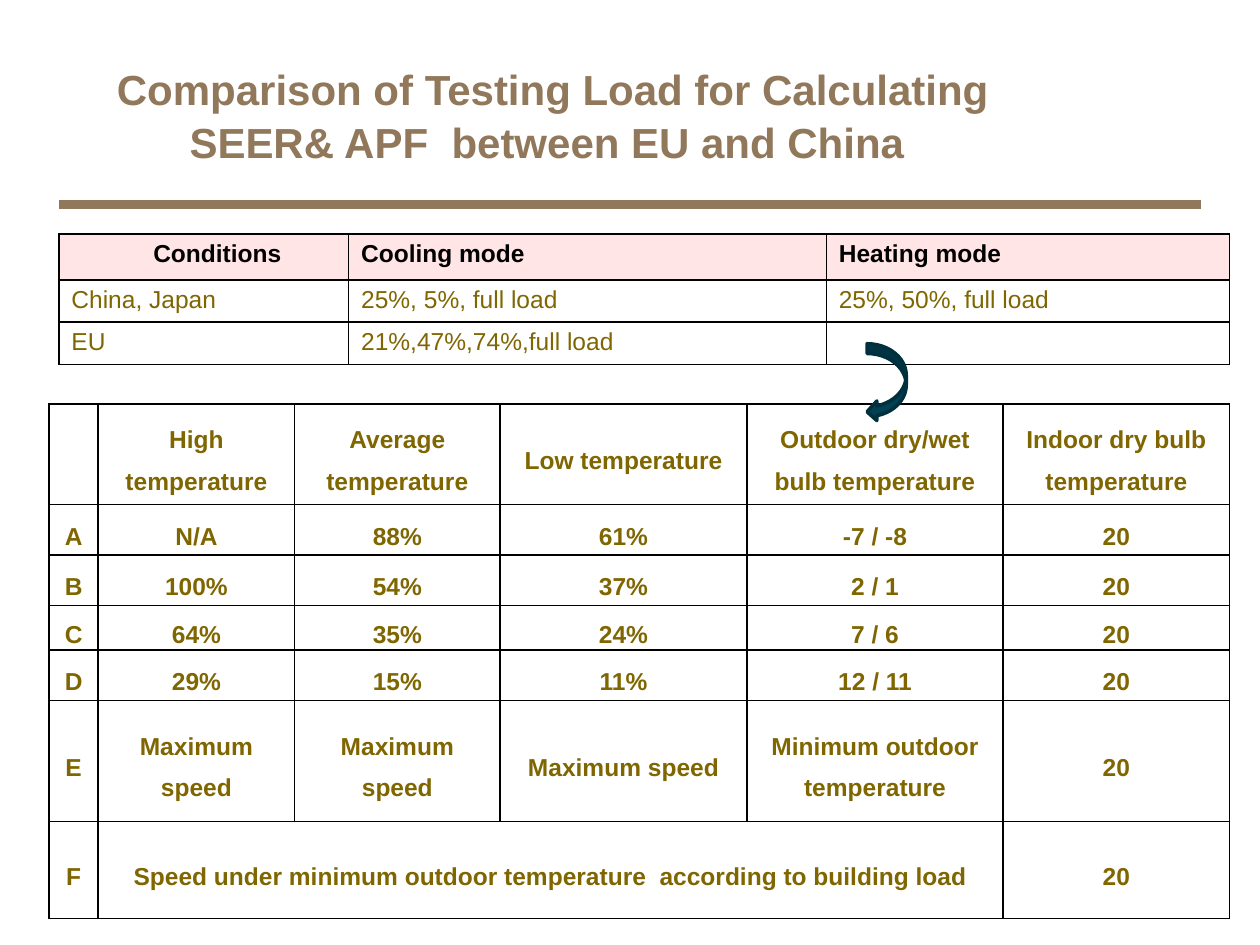
from dataclasses import dataclass

from lxml.etree import SubElement
from pptx import Presentation
from pptx.dml.color import RGBColor
from pptx.enum.shapes import MSO_CONNECTOR as Connector, MSO_SHAPE as Shape
from pptx.enum.text import MSO_ANCHOR as Anchor, PP_ALIGN as Align
from pptx.oxml.ns import qn
from pptx.slide import Slide
from pptx.table import Table, _Cell as Cell
from pptx.util import Cm, Pt

COLORS = {
    "title": "91785B",
    "black": "000000",
    "olive": "7F6600",
    "header": "FFE5E5",
    "arrow": "004153",
    "arrow_edge": "00303D",
}
FONT = "Arial"


@dataclass(frozen=True)
class Grid:
    left: float
    top: float
    columns: list[float]
    rows: list[float]
    texts: list[list[str]]
    margin_x: float
    margin_y: float
    anchor: Anchor
    align: Align
    line_spacing: float
    bold: bool
    header_fill: bool


MODES = Grid(
    1.19, 4.72, [5.84, 9.63, 8.13], [0.92, 0.81, 0.81],
    [
        ["Conditions", "Cooling mode", "Heating mode"],
        ["China, Japan", "25%, 5%, full load", "25%, 50%, full load"],
        ["EU", "21%,47%,74%,full load", ""],
    ],
    0.25, 0.13, Anchor.TOP, Align.LEFT, 1.0, False, True,
)

LOADS = Grid(
    0.99, 8.14, [0.99, 3.96, 4.14, 4.98, 5.16, 4.57],
    [2.03, 1.02, 1.02, 0.84, 1.02, 2.44, 1.96],
    [
        ["", "High temperature", "Average temperature", "Low temperature",
         "Outdoor dry/wet bulb temperature", "Indoor dry bulb temperature"],
        ["A", "N/A", "88%", "61%", "-7 / -8", "20"],
        ["B", "100%", "54%", "37%", "2 / 1", "20"],
        ["C", "64%", "35%", "24%", "7 / 6", "20"],
        ["D", "29%", "15%", "11%", "12 / 11", "20"],
        ["E", "Maximum speed", "Maximum speed", "Maximum speed",
         "Minimum outdoor temperature", "20"],
        ["F", "Speed under minimum outdoor temperature  according to building load",
         "", "", "", "20"],
    ],
    0.18, 0, Anchor.MIDDLE, Align.CENTER, 1.5, True, False,
)


def color(name: str) -> RGBColor:
    return RGBColor.from_string(COLORS[name])


def add_borders(cell: Cell) -> None:
    properties = cell._tc.get_or_add_tcPr()
    for side in ("L", "R", "T", "B"):
        line = SubElement(properties, qn(f"a:ln{side}"), w=str(Pt(1)))
        fill = SubElement(line, qn("a:solidFill"))
        SubElement(fill, qn("a:srgbClr"), val=COLORS["black"])


def format_cell(cell: Cell, text: str, grid: Grid, header: bool) -> None:
    add_borders(cell)
    if header:
        cell.fill.solid()
        cell.fill.fore_color.rgb = color("header")
    else:
        cell.fill.background()
    cell.margin_left = cell.margin_right = Cm(grid.margin_x)
    cell.margin_top = cell.margin_bottom = Cm(grid.margin_y)
    cell.vertical_anchor = grid.anchor
    cell.text = text
    para = cell.text_frame.paragraphs[0]
    para.alignment = grid.align
    para.line_spacing = grid.line_spacing
    para.font.name = FONT
    para.font.size = Pt(14)
    para.font.bold = grid.bold or header
    para.font.color.rgb = color("black" if header else "olive")
    if not text:
        SubElement(para._p, qn("a:endParaRPr"), sz="1400")


def add_grid(page: Slide, grid: Grid) -> Table:
    table = page.shapes.add_table(
        len(grid.rows), len(grid.columns), Cm(grid.left), Cm(grid.top),
        Cm(sum(grid.columns)), Cm(sum(grid.rows)),
    ).table
    table.first_row = table.horz_banding = False
    for column, width in zip(table.columns, grid.columns):
        column.width = Cm(width)
    for row, height, texts in zip(table.rows, grid.rows, grid.texts):
        row.height = Cm(height)
        header = grid.header_fill and texts is grid.texts[0]
        for cell, text in zip(row.cells, texts):
            format_cell(cell, text, grid, header)
    return table


def add_title(page: Slide) -> None:
    box = page.shapes.add_textbox(Cm(1.19), Cm(1.12), Cm(19.91), Cm(2.36))
    frame = box.text_frame
    frame.word_wrap = True
    frame.vertical_anchor = Anchor.MIDDLE
    frame.margin_left = frame.margin_right = 0
    frame.margin_top = frame.margin_bottom = 0
    para = frame.paragraphs[0]
    para.text = ("Comparison of Testing Load for Calculating "
                 "SEER& APF  between EU and China ")
    para.alignment = Align.CENTER
    para.line_spacing = 1.05
    para.font.name = FONT
    para.font.size = Pt(24)
    para.font.bold = True
    para.font.color.rgb = color("title")


def add_rule(page: Slide) -> None:
    rule = page.shapes.add_connector(
        Connector.STRAIGHT, Cm(1.19), Cm(4.12), Cm(24.21), Cm(4.12))
    rule.line.color.rgb = color("title")
    rule.line.width = Pt(5)
    SubElement(rule._element.spPr, qn("a:effectLst"))


def add_arrow(page: Slide) -> None:
    arrow = page.shapes.add_shape(
        Shape.CURVED_LEFT_ARROW, Cm(17.48), Cm(6.93), Cm(0.79), Cm(1.57))
    arrow.shadow.inherit = False
    arrow.fill.solid()
    arrow.fill.fore_color.rgb = color("arrow")
    arrow.line.color.rgb = color("arrow_edge")
    arrow.line.width = Pt(2)


def main() -> None:
    deck = Presentation()
    deck.slide_width, deck.slide_height = Cm(25.4), Cm(19.05)
    page = deck.slides.add_slide(deck.slide_layouts[6])
    add_rule(page)
    add_title(page)
    modes = add_grid(page, MODES)
    modes.cell(0, 0).margin_left = Cm(1.9)
    loads = add_grid(page, LOADS)
    loads.cell(6, 1).merge(loads.cell(6, 4))
    add_arrow(page)
    deck.save("out.pptx")


if __name__ == "__main__":
    main()
